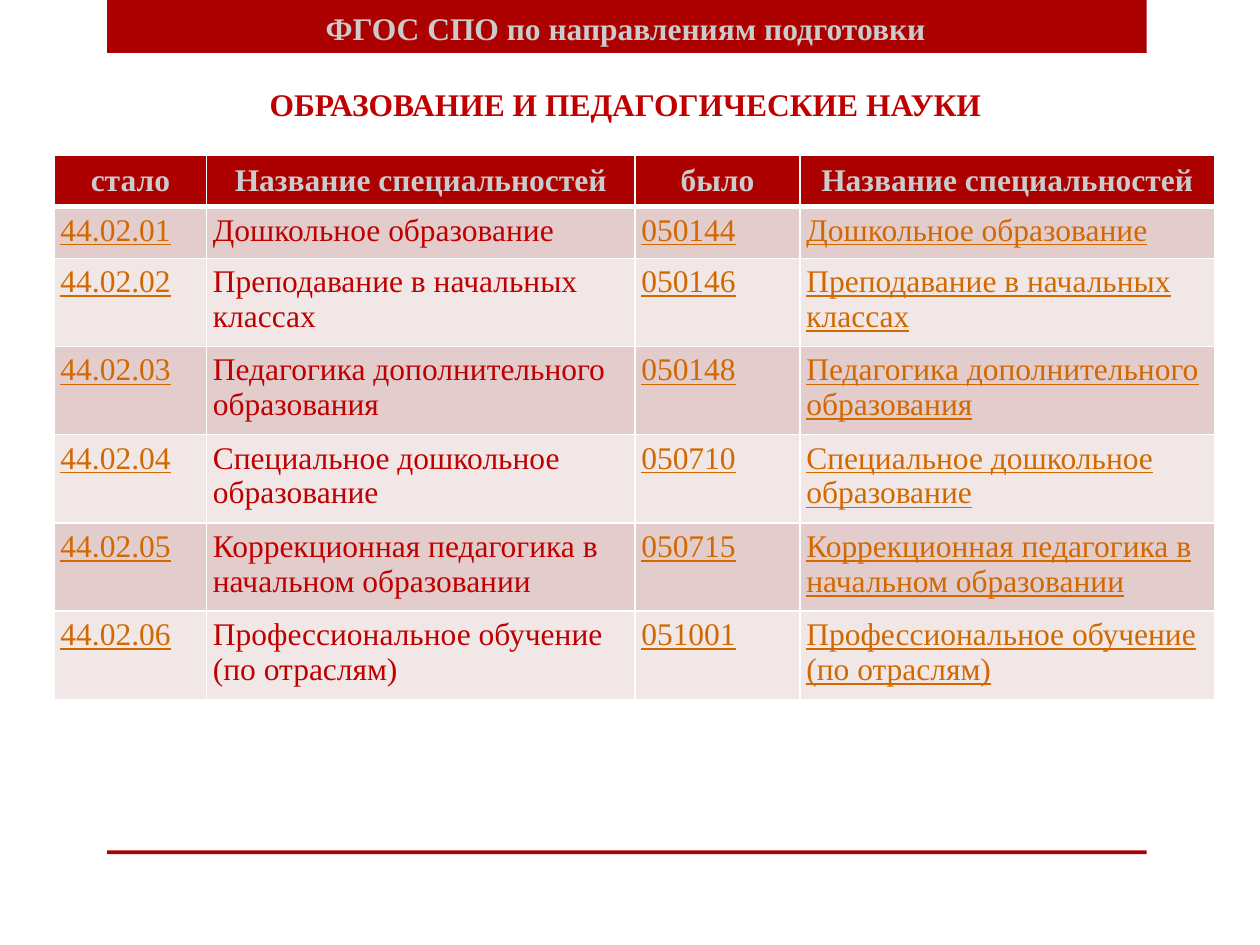
import dataclasses

import pptx
import pptx.dml.color
import pptx.enum.shapes
import pptx.enum.text
import pptx.oxml
import pptx.oxml.ns
import pptx.util
from pptx.util import Inches

FONT = "Times New Roman"
COLORS = {
    "band": "AD0101",
    "band_text": "CBCBCB",
    "text": "C00000",
    "link": "D26900",
    "odd_row": "E3CCCC",
    "even_row": "F1E7E7",
    "border": "FFFFFF",
}
ALIGN = pptx.enum.text.PP_ALIGN
ANCHOR = pptx.enum.text.MSO_ANCHOR


@dataclasses.dataclass(frozen=True)
class Specialty:
    new_code: str
    old_code: str
    name: str
    height: float = 0.7


SPECIALTIES = [
    Specialty("44.02.01", "050144", "Дошкольное образование", 0.41),
    Specialty("44.02.02", "050146", "Преподавание в начальных классах"),
    Specialty("44.02.03", "050148", "Педагогика дополнительного образования"),
    Specialty("44.02.04", "050710", "Специальное дошкольное образование"),
    Specialty("44.02.05", "050715", "Коррекционная педагогика в начальном образовании"),
    Specialty("44.02.06", "051001", "Профессиональное обучение (по отраслям)"),
]
HEADERS = ["стало", "Название специальностей", "было", "Название специальностей"]
COLUMN_WIDTHS = [1.21, 3.4, 1.31, 3.29]
HEADER_HEIGHT = 0.41


def rgb(name: str) -> pptx.dml.color.RGBColor:
    return pptx.dml.color.RGBColor.from_string(COLORS[name])


def style_paragraph(paragraph, color: str, bold=False, underline=False, align=ALIGN.LEFT) -> None:
    font = paragraph.font
    font.name, font.size = FONT, pptx.util.Pt(18)
    font.bold, font.underline = bold, underline
    font.color.rgb = rgb(color)
    paragraph.alignment = align


def draw_band(slide, top: float, height: float) -> None:
    band = slide.shapes.add_shape(
        pptx.enum.shapes.MSO_SHAPE.RECTANGLE,
        Inches(0.85), Inches(top), Inches(8.25), Inches(height))
    band.shadow.inherit = False
    band.fill.solid()
    band.fill.fore_color.rgb = rgb("band")
    band.line.fill.background()


def set_borders(cell, top: float, bottom: float) -> None:
    properties = cell._tc.get_or_add_tcPr()
    for side, points in (("L", 1), ("R", 1), ("T", top), ("B", bottom)):
        properties.append(pptx.oxml.parse_xml(
            f'<a:ln{side} {pptx.oxml.ns.nsdecls("a")} w="{pptx.util.Pt(points)}">'
            f'<a:solidFill><a:srgbClr val="{COLORS["border"]}"/></a:solidFill></a:ln{side}>'))


def fill_cell(cell, text: str, fill: str, top=1, bottom=1, **text_style) -> None:
    set_borders(cell, top, bottom)
    cell.fill.solid()
    cell.fill.fore_color.rgb = rgb(fill)
    cell.margin_left = cell.margin_right = Inches(0.05)
    cell.margin_top = cell.margin_bottom = Inches(0.05)
    cell.text = text
    style_paragraph(cell.text_frame.paragraphs[0], **text_style)


def draw_heading(slide) -> None:
    heading = slide.shapes.title
    heading.left, heading.top = Inches(0.83), Inches(0.02)
    heading.width, heading.height = Inches(8.27), Inches(1.01)
    frame = heading.text_frame
    frame.word_wrap = True
    frame.auto_size = pptx.enum.text.MSO_AUTO_SIZE.NONE
    frame.vertical_anchor = ANCHOR.TOP
    frame.text = "ФГОС СПО по направлениям подготовки\nОБРАЗОВАНИЕ И ПЕДАГОГИЧЕСКИЕ НАУКИ"
    for paragraph, color in zip(frame.paragraphs, ("band_text", "text")):
        style_paragraph(paragraph, color, bold=True, align=ALIGN.CENTER)
    frame.paragraphs[1].space_before = pptx.util.Pt(22)
    # Bring the heading in front of the band
    slide.shapes.element.append(heading.element)


def draw_specialties(slide) -> None:
    heights = [HEADER_HEIGHT] + [specialty.height for specialty in SPECIALTIES]
    table = slide.shapes.add_table(
        len(heights), len(HEADERS), Inches(0.43), Inches(1.23),
        Inches(sum(COLUMN_WIDTHS)), Inches(sum(heights))).table
    for column, width in zip(table.columns, COLUMN_WIDTHS):
        column.width = Inches(width)
    for row, height in zip(table.rows, heights):
        row.height = Inches(height)

    # Header row
    for column, header in enumerate(HEADERS):
        cell = table.cell(0, column)
        fill_cell(cell, header, "band", bottom=3,
                  color="band_text", bold=True, align=ALIGN.CENTER)
        cell.vertical_anchor = ANCHOR.MIDDLE

    # New code and name, then old code and name; all but the new name look like links
    for row, specialty in enumerate(SPECIALTIES, start=1):
        fill = "odd_row" if row % 2 else "even_row"
        texts = (specialty.new_code, specialty.name, specialty.old_code, specialty.name)
        for column, text in enumerate(texts):
            linked = column != 1
            fill_cell(table.cell(row, column), text, fill, top=3 if row == 1 else 1,
                      color="link" if linked else "text", underline=linked)


def main() -> None:
    presentation = pptx.Presentation()
    presentation.slide_width, presentation.slide_height = Inches(10), Inches(7.5)
    slide = presentation.slides.add_slide(presentation.slide_layouts.get_by_name("Title Only"))
    draw_band(slide, top=0, height=0.42)
    draw_band(slide, top=6.75, height=0.03)
    draw_heading(slide)
    draw_specialties(slide)
    presentation.save("out.pptx")


if __name__ == "__main__":
    main()
